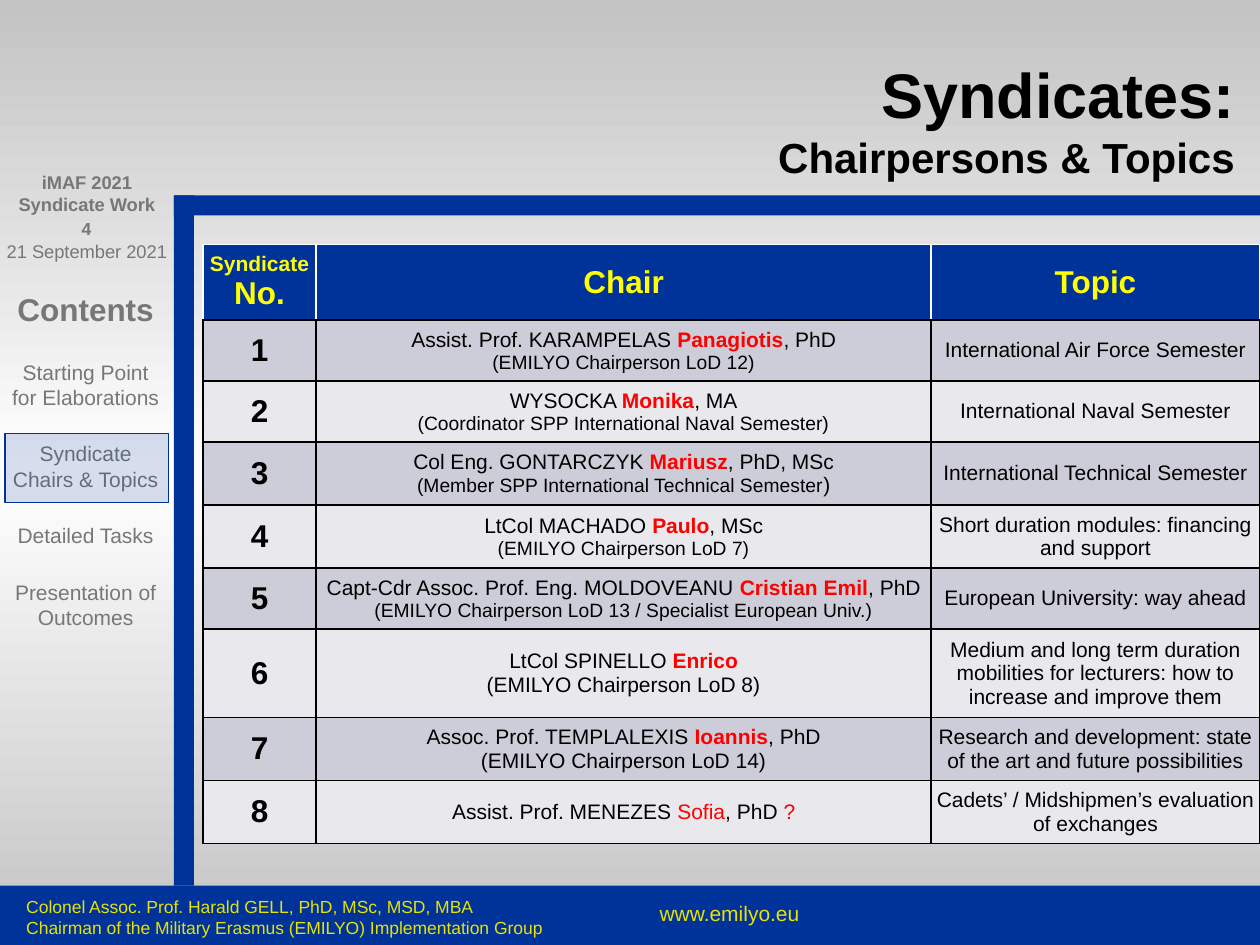
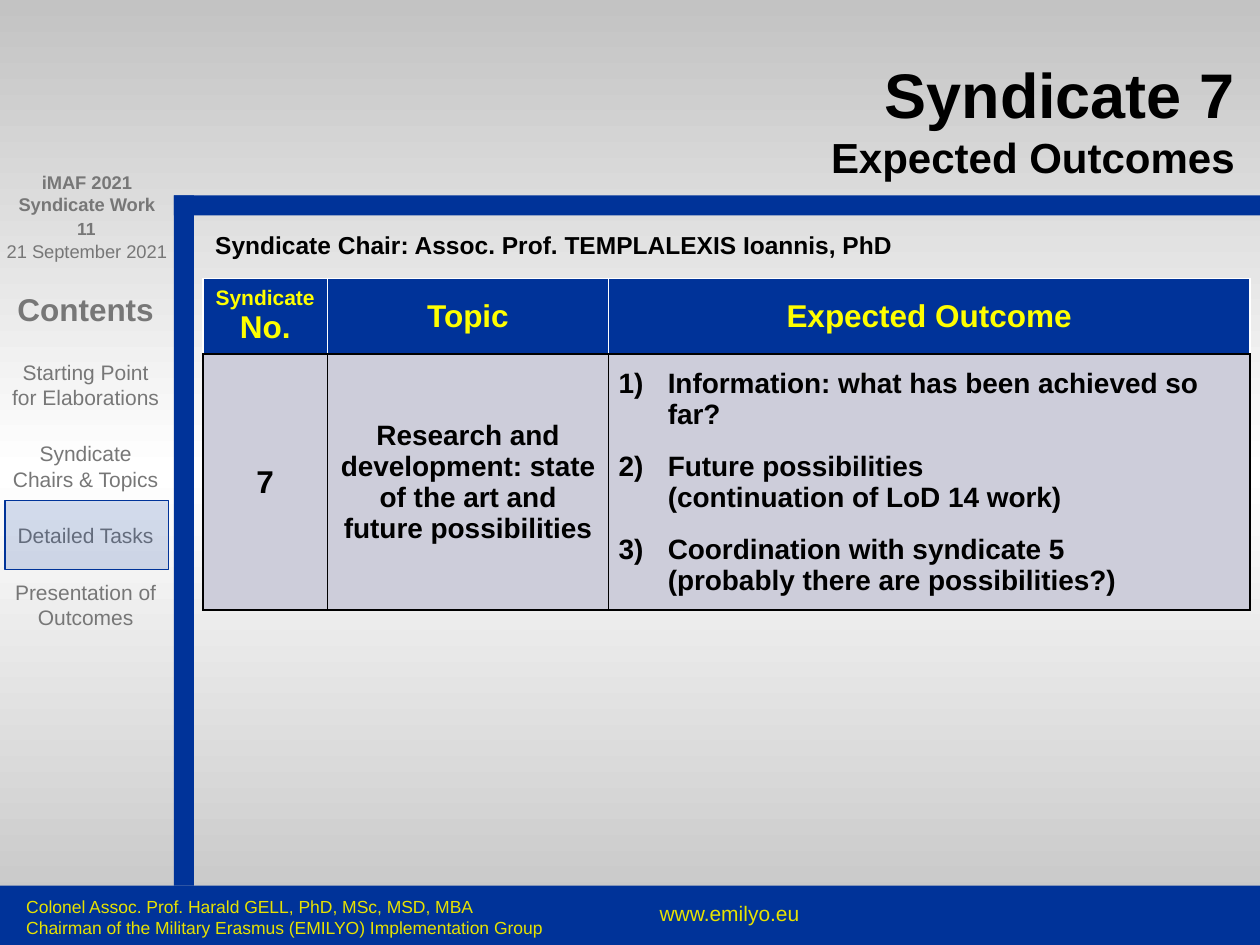
from collections import namedtuple
from copy import deepcopy

from lxml.etree import SubElement
from pptx import Presentation
from pptx.dml.color import RGBColor
from pptx.enum.shapes import MSO_SHAPE as Shape
from pptx.enum.text import MSO_ANCHOR as Anchor, MSO_AUTO_SIZE as AutoSize, PP_ALIGN as Align
from pptx.oxml.ns import qn
from pptx.util import Inches, Pt

BLUE = RGBColor(0x00, 0x33, 0x99)
YELLOW = RGBColor(0xFF, 0xFF, 0x00)
FOOTER_YELLOW = RGBColor(0xE7, 0xE2, 0x00)
GRAY = RGBColor(0x77, 0x77, 0x77)
SILVER = RGBColor(0xC3, 0xC3, 0xC3)
WHITE = RGBColor(0xFF, 0xFF, 0xFF)
BLACK = RGBColor(0x00, 0x00, 0x00)
RED = RGBColor(0xFF, 0x00, 0x00)
ODD_ROW = RGBColor(0xCD, 0xCD, 0xDA)
EVEN_ROW = RGBColor(0xE8, 0xE8, 0xED)

FONT = "Arial"
BAR = 0.16
SIDEBAR_WIDTH = 1.38
FOOTER_TOP = 7.03
TABLE_LEFT = 1.61

CONTENTS = ["Starting Point for Elaborations", "Syndicate Chairs & Topics",
            "Detailed Tasks", "Presentation of Outcomes"]
MARKER_TOPS = {"Syndicate Chairs & Topics": 3.44, "Detailed Tasks": 3.97}

Run = namedtuple("Run", "text size color bold", defaults=(12, BLACK, False))


def heading(text, size=18):
    return [Run(text, size, YELLOW, True)]


def chair(before, name, after, *role):
    return [[Run(before), Run(name, 12, RED, True), Run(after)], list(role)]


NUMBER_HEADING = [heading("Syndicate", 12), heading("No.")]

SYNDICATES = [
    (chair("Assist. Prof. KARAMPELAS ", "Panagiotis", ", PhD",
           Run("(EMILYO Chairperson LoD 12)", 11)),
     "International Air Force Semester", 0.46),
    (chair("WYSOCKA ", "Monika", ", MA",
           Run("(Coordinator SPP International Naval Semester)", 11)),
     "International Naval Semester", 0.46),
    (chair("Col Eng. GONTARCZYK ", "Mariusz", ", PhD, MSc",
           Run("(Member SPP International Technical Semester", 11), Run(")")),
     "International Technical Semester", 0.47),
    (chair("LtCol MACHADO ", "Paulo", ", MSc",
           Run("(EMILYO Chairperson LoD 7)", 11)),
     "Short duration modules: financing and support", 0.47),
    (chair("Capt-Cdr Assoc. Prof. Eng. MOLDOVEANU ", "Cristian Emil", ", PhD",
           Run("(EMILYO Chairperson LoD 13 / Specialist European Univ.)", 11)),
     "European University: way ahead", 0.46),
    (chair("LtCol SPINELLO ", "Enrico", "", Run("(EMILYO Chairperson LoD 8)")),
     "Medium and long term duration mobilities for lecturers: "
     "how to increase and improve them", 0.66),
    (chair("Assoc. Prof. TEMPLALEXIS ", "Ioannis", ", PhD",
           Run("(EMILYO Chairperson LoD 14)")),
     "Research and development: state of the art and future possibilities", 0.47),
    ([[Run("Assist. Prof. MENEZES "), Run("Sofia", 12, RED), Run(", PhD "),
       Run("?", 12, RED)]],
     "Cadets’ / Midshipmen’s evaluation of exchanges", 0.47),
]

OUTCOMES = [
    ["Information: what has been achieved so far?"],
    ["Future possibilities", "(continuation of LoD 14 work)"],
    ["Coordination with syndicate 5", "(probably there are possibilities?)"],
]


def add_run(paragraph, content):
    run = paragraph.add_run()
    run.text = content.text
    font = run.font
    font.name, font.size, font.bold = FONT, Pt(content.size), content.bold
    font.color.rgb = content.color
    return run


def write(frame, lines, align=Align.CENTER):
    for index, line in enumerate(lines):
        paragraph = frame.paragraphs[0] if index == 0 else frame.add_paragraph()
        paragraph.alignment = align
        for content in line:
            if content.text:
                add_run(paragraph, content)


def set_insets(frame, side, end):
    frame.margin_left = frame.margin_right = Inches(side)
    frame.margin_top = frame.margin_bottom = Inches(end)


def add_text(slide, box, lines, align=Align.CENTER, insets=(0.1, 0.05)):
    frame = slide.shapes.add_textbox(*map(Inches, box)).text_frame
    frame.word_wrap = True
    set_insets(frame, *insets)
    write(frame, lines, align)
    return frame


def add_band(slide, box):
    band = slide.shapes.add_shape(Shape.RECTANGLE, *map(Inches, box))
    band.shadow.inherit = False
    band.fill.solid()
    band.fill.fore_color.rgb = BLUE
    band.line.fill.background()
    return band


def set_background(master):
    fill = master.background.fill
    fill.gradient()
    fill.gradient_angle = 270
    stop_list = master.element.find(".//" + qn("a:gsLst"))
    stop_list.insert(1, deepcopy(stop_list[0]))
    for stop, position, color in zip(fill.gradient_stops, (0, 0.5, 1), (SILVER, WHITE, SILVER)):
        stop.position = position
        stop.color.rgb = color


def add_footer(slide, top):
    add_band(slide, (0, top, 10, 7.5 - top))
    add_text(slide, (4.9, top + 0.07, 1.78, 0.35),
             [[Run("www.emilyo.eu", 12, FOOTER_YELLOW)]])
    author = ["Colonel Assoc. Prof. Harald GELL, PhD, MSc, MSD, MBA",
              "Chairman of the Military Erasmus (EMILYO) Implementation Group"]
    add_text(slide, (0.11, top + 0.03, 4.38, 0.35),
             [[Run(text, 10, FOOTER_YELLOW)] for text in author], Align.LEFT)


def add_sidebar(slide, width, number):
    event = add_text(slide, (0, 1.36, width, 0.82),
                     [[Run("iMAF 2021", 10.5, GRAY, True)],
                      [Run("Syndicate Work", 10.5, GRAY, True)],
                      [Run("21 September 2021", 10.5, GRAY)]], insets=(0, 0))
    event.paragraphs[2].space_before = Pt(14)
    add_text(slide, (0.44, 1.68, 0.49, 0.27), [[Run(str(number), 10, GRAY, True)]])
    contents = add_text(slide, (0.05, 2.26, width - 0.12, 4.78),
                        [[Run("Contents", 18, GRAY, True)]]
                        + [[Run(topic, 12, GRAY)] for topic in CONTENTS],
                        insets=(0.04, 0.04))
    for paragraph in contents.paragraphs:
        paragraph.space_after = Pt(18)


def add_marker(slide, topic):
    marker = add_band(slide, (0.04, MARKER_TOPS[topic], 1.3, 0.55))
    color = marker.element.spPr.find(qn("a:solidFill"))[0]
    SubElement(color, qn("a:alpha"), val="16000")
    marker.line.color.rgb = BLUE
    marker.line.width = Pt(0.75)


def add_title(slide, headline, subtitle):
    title = slide.shapes.title
    title.left, title.top, title.width, title.height = map(
        Inches, (SIDEBAR_WIDTH, 0.19, 8.42, 1.25))
    frame = title.text_frame
    frame.auto_size = AutoSize.NONE
    frame.word_wrap = True
    frame.vertical_anchor = Anchor.BOTTOM
    set_insets(frame, 0, 0)
    write(frame, [[Run(headline, 36, BLACK, True)], [Run(subtitle, 24, BLACK, True)]],
          Align.RIGHT)


def start_slide(deck, number, headline, subtitle, topic):
    slide = deck.slides.add_slide(deck.slide_layouts[5])
    add_band(slide, (SIDEBAR_WIDTH, 1.55, 10 - SIDEBAR_WIDTH, BAR))
    add_band(slide, (SIDEBAR_WIDTH, 1.55, BAR, FOOTER_TOP - 1.55))
    add_footer(slide, FOOTER_TOP)
    add_sidebar(slide, SIDEBAR_WIDTH, number)
    add_title(slide, headline, subtitle)
    add_marker(slide, topic)
    return slide


def set_borders(cell, edge_color):
    properties = cell._tc.get_or_add_tcPr()
    for side in "LRTB":
        color = BLACK if side == "B" else edge_color
        line = SubElement(properties, qn("a:ln" + side), w=str(Pt(1)))
        solid = SubElement(line, qn("a:solidFill"))
        SubElement(solid, qn("a:srgbClr"), val=str(color))


def add_grid(slide, top, widths, heights, rows, side_inset):
    grid = slide.shapes.add_table(
        len(rows), len(widths), Inches(TABLE_LEFT), Inches(top),
        Inches(sum(widths)), Inches(sum(heights))).table
    for column, width in zip(grid.columns, widths):
        column.width = Inches(width)
    for index, (row, height, cells) in enumerate(zip(grid.rows, heights, rows)):
        row.height = Inches(height)
        for cell, lines in zip(row.cells, cells):
            set_borders(cell, BLACK if index else WHITE)
            cell.fill.solid()
            cell.fill.fore_color.rgb = (ODD_ROW if index % 2 else EVEN_ROW) if index else BLUE
            cell.vertical_anchor = Anchor.MIDDLE
            set_insets(cell, side_inset, 0.05)
            write(cell.text_frame, lines)
    return grid


def write_outcomes(frame):
    for index, lines in enumerate(OUTCOMES):
        paragraph = frame.paragraphs[0] if index == 0 else frame.add_paragraph()
        paragraph.alignment = Align.LEFT
        if index:
            paragraph.space_before = Pt(12)
        properties = paragraph._p.get_or_add_pPr()
        properties.set("marL", str(Inches(0.39)))
        properties.set("indent", str(-Inches(0.39)))
        SubElement(properties, qn("a:buFont"), typeface=FONT)
        SubElement(properties, qn("a:buAutoNum"), type="arabicParenR")
        run = add_run(paragraph, Run(lines[0], 16, BLACK, True))
        for text in lines[1:]:
            paragraph.add_line_break()
            paragraph._p[-1].append(deepcopy(run._r.rPr))
            add_run(paragraph, Run(text, 16, BLACK, True))


def build_chairs_slide(deck):
    slide = start_slide(deck, 4, "Syndicates:", "Chairpersons & Topics",
                        "Syndicate Chairs & Topics")
    rows = [[NUMBER_HEADING, [heading("Chair")], [heading("Topic")]]]
    for number, (chair_lines, topic, _) in enumerate(SYNDICATES, 1):
        rows.append([[[Run(str(number), 18, BLACK, True)]], chair_lines, [[Run(topic)]]])
    heights = [0.56] + [height for _, _, height in SYNDICATES]
    add_grid(slide, 1.94, (0.9, 4.88, 2.61), heights, rows, 0.04)


def build_outcomes_slide(deck):
    slide = start_slide(deck, 11, "Syndicate 7", "Expected Outcomes", "Detailed Tasks")
    add_text(slide, (TABLE_LEFT, 1.78, 8.27, 0.4),
             [[Run("Syndicate Chair: Assoc. Prof. TEMPLALEXIS Ioannis, PhD", 14, BLACK, True)]],
             Align.LEFT)
    topic = SYNDICATES[6][1]
    rows = [[NUMBER_HEADING, [heading("Topic")], [heading("Expected Outcome")]],
            [[[Run("7", 18, BLACK, True)]], [[Run(topic, 16, BLACK, True)]], []]]
    grid = add_grid(slide, 2.21, (0.99, 2.23, 5.09), (0.57, 1.91), rows, 0.08)
    write_outcomes(grid.cell(1, 2).text_frame)


def main():
    deck = Presentation()
    deck.slide_width, deck.slide_height = Inches(10), Inches(7.5)
    set_background(deck.slide_master)
    build_chairs_slide(deck)
    build_outcomes_slide(deck)
    deck.save("out.pptx")


if __name__ == "__main__":
    main()
